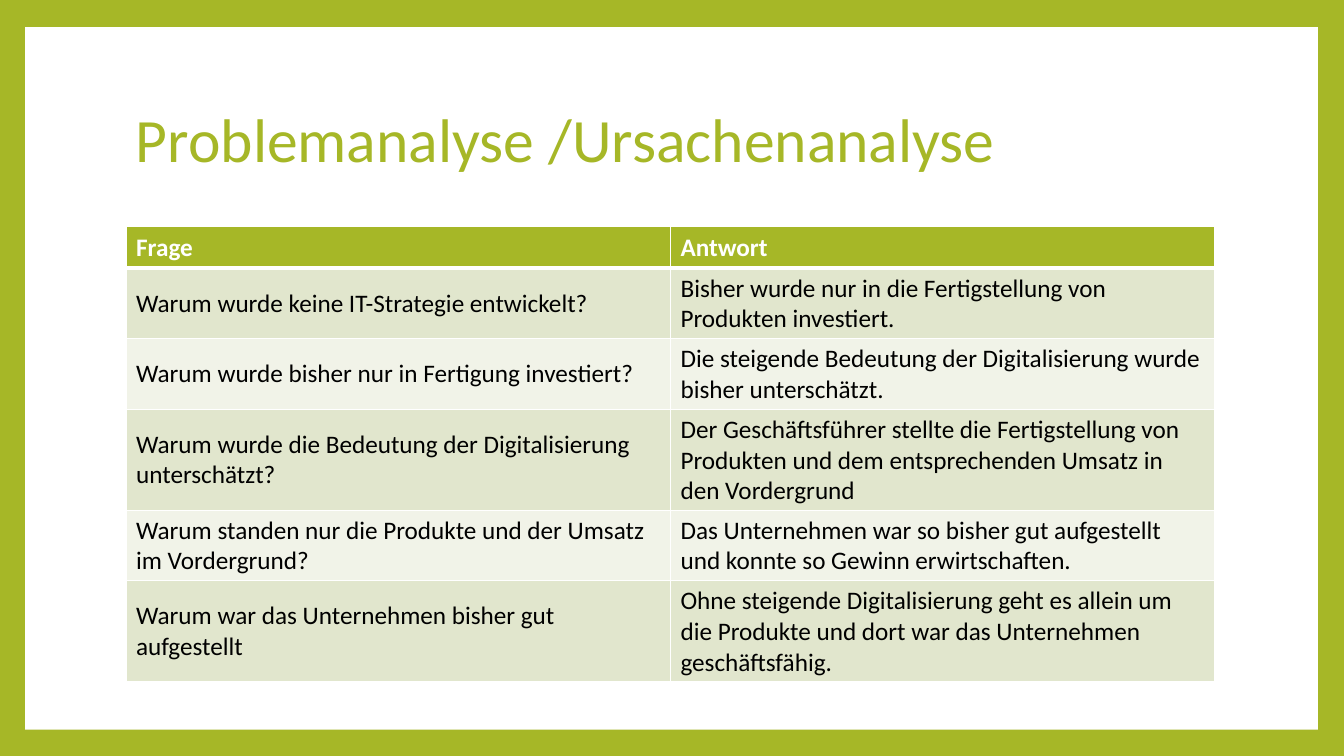
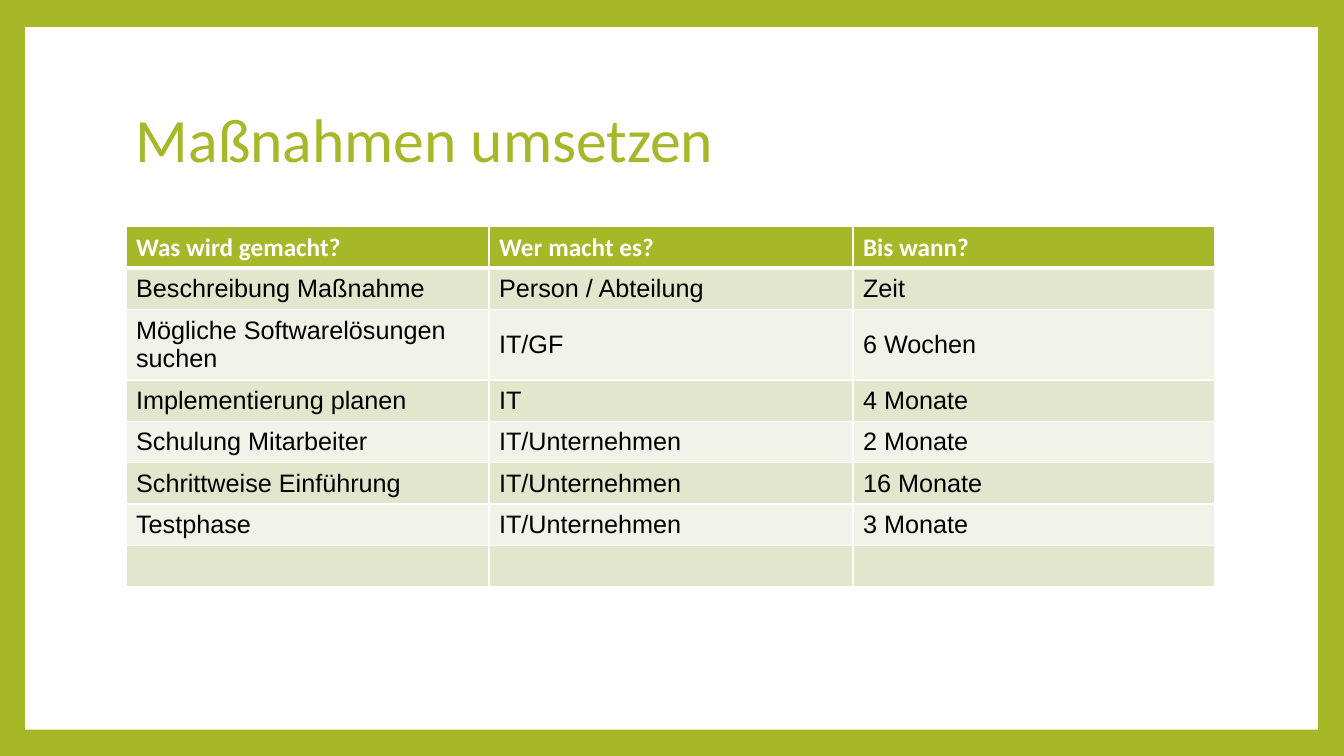
"""Build two framed slides, each with a title and a banded table."""
from dataclasses import dataclass

from lxml import etree
from pptx import Presentation
from pptx.dml.color import RGBColor
from pptx.enum import shapes, text
from pptx.oxml import ns
from pptx.util import Inches, Pt

GREEN = RGBColor(0xA6, 0xB7, 0x27)
WHITE = RGBColor(0xFF, 0xFF, 0xFF)
BLACK = RGBColor(0x00, 0x00, 0x00)
BANDS = (RGBColor(0xE1, 0xE6, 0xCD), RGBColor(0xF1, 0xF3, 0xE8))
HEADING_FONT = "Calibri"
LEFT, CONTENT_WIDTH = Inches(1.25), Inches(10.8)
ROW_HEIGHT = Inches(0.41)
THIN, THICK = Pt(1), Pt(3)


@dataclass(frozen=True)
class TableSlide:
    title: str
    body_font: str
    widths: tuple[float, ...]
    rows: tuple[tuple[str, ...], ...]


SLIDES = (
    TableSlide("Problemanalyse /Ursachenanalyse", "Calibri", (5.4, 5.4), (
        ("Frage", "Antwort"),
        ("Warum wurde keine IT-Strategie entwickelt?",
         "Bisher wurde nur in die Fertigstellung von Produkten investiert."),
        ("Warum wurde bisher nur in Fertigung investiert?",
         "Die steigende Bedeutung der Digitalisierung wurde bisher unterschätzt."),
        ("Warum wurde die Bedeutung der Digitalisierung unterschätzt?",
         "Der Geschäftsführer stellte die Fertigstellung von Produkten "
         "und dem entsprechenden Umsatz in den Vordergrund"),
        ("Warum standen nur die Produkte und der Umsatz im Vordergrund?",
         "Das Unternehmen war so bisher gut aufgestellt und konnte so Gewinn erwirtschaften."),
        ("Warum war das Unternehmen bisher gut aufgestellt",
         "Ohne steigende Digitalisierung geht es allein um die Produkte "
         "und dort war das Unternehmen geschäftsfähig."),
    )),
    TableSlide("Maßnahmen umsetzen", "Arial", (3.6, 3.61, 3.59), (
        ("Was wird gemacht?", "Wer macht es?", "Bis wann?"),
        ("Beschreibung Maßnahme", "Person / Abteilung", "Zeit"),
        ("Mögliche Softwarelösungen suchen", "IT/GF", "6 Wochen"),
        ("Implementierung planen", "IT", "4 Monate"),
        ("Schulung Mitarbeiter", "IT/Unternehmen", "2 Monate"),
        ("Schrittweise Einführung", "IT/Unternehmen", "16 Monate"),
        ("Testphase", "IT/Unternehmen", "3 Monate"),
        ("", "", ""),
    )),
)


def write(frame, content: str, color: RGBColor, **formats) -> None:
    para = frame.paragraphs[0]
    span = para.add_run()
    span.text = content
    for name, value in formats.items():
        setattr(span.font, name, value)
    span.font.color.rgb = color


def add_frame(page) -> None:
    panel = page.shapes.add_shape(shapes.MSO_SHAPE.RECTANGLE, Inches(0.25), Inches(0.27),
                                  Inches(12.82), Inches(6.97))
    panel.shadow.inherit = False
    panel.fill.solid()
    panel.fill.fore_color.rgb = WHITE
    panel.line.fill.background()


def add_title(page, title: str) -> None:
    box = page.shapes.add_textbox(LEFT, Inches(0.67), CONTENT_WIDTH, Inches(1.48))
    frame = box.text_frame
    frame.word_wrap = True
    frame.vertical_anchor = text.MSO_ANCHOR.MIDDLE
    frame.paragraphs[0].line_spacing = 0.9
    write(frame, title, GREEN, name=HEADING_FONT, size=Pt(44))


def add_borders(cell, row: int) -> None:
    properties = cell._tc.get_or_add_tcPr()
    edges = {"lnL": THIN, "lnR": THIN,
             "lnT": THICK if row == 1 else THIN,
             "lnB": THICK if row == 0 else THIN}
    for edge, width in edges.items():
        line = etree.SubElement(properties, ns.qn(f"a:{edge}"), w=str(int(width)))
        fill = etree.SubElement(line, ns.qn("a:solidFill"))
        etree.SubElement(fill, ns.qn("a:srgbClr"), val=str(WHITE))


def add_table(page, design: TableSlide) -> None:
    count = len(design.rows)
    table = page.shapes.add_table(count, len(design.widths), LEFT, Inches(2.25),
                                  CONTENT_WIDTH, ROW_HEIGHT * count).table
    for column, width in zip(table.columns, design.widths):
        column.width = Inches(width)
    for row, entries in enumerate(design.rows):
        header = row == 0
        font = HEADING_FONT if header else design.body_font
        for column, entry in enumerate(entries):
            cell = table.cell(row, column)
            add_borders(cell, row)
            cell.fill.solid()
            cell.fill.fore_color.rgb = GREEN if header else BANDS[(row - 1) % 2]
            cell.vertical_anchor = text.MSO_ANCHOR.MIDDLE
            if entry:
                write(cell.text_frame, entry, WHITE if header else BLACK,
                      name=font, size=Pt(18), bold=header)


def main() -> None:
    deck = Presentation()
    deck.slide_width, deck.slide_height = Inches(13.33), Inches(7.5)
    background = deck.slide_master.background.fill
    background.solid()
    background.fore_color.rgb = GREEN
    for design in SLIDES:
        page = deck.slides.add_slide(deck.slide_layouts[6])
        add_frame(page)
        add_title(page, design.title)
        add_table(page, design)
    deck.save("out.pptx")


if __name__ == "__main__":
    main()
